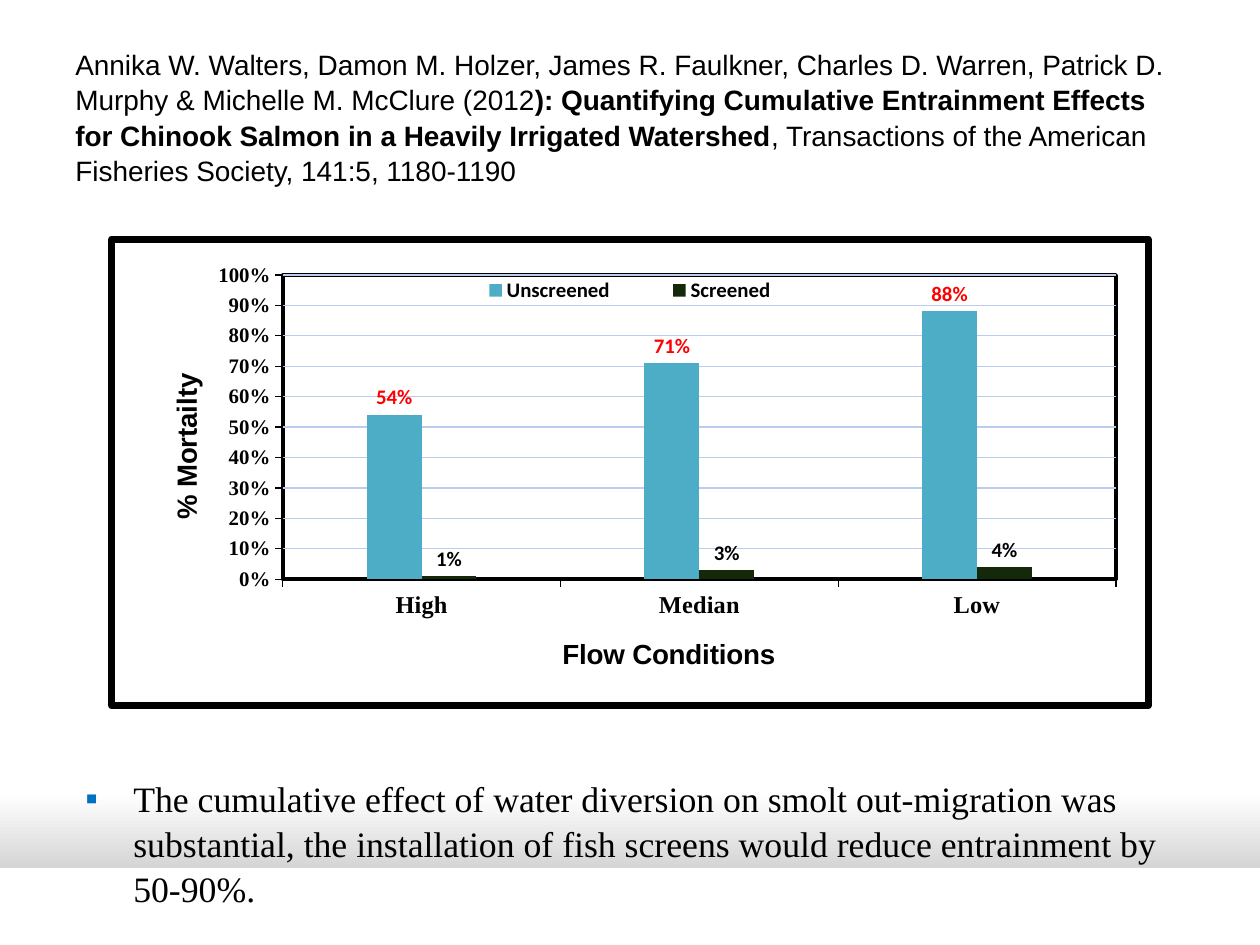
from lxml.etree import SubElement
from pptx import Presentation
from pptx.chart.data import CategoryChartData
from pptx.dml.color import RGBColor
from pptx.enum.chart import XL_CHART_TYPE, XL_LABEL_POSITION, XL_LEGEND_POSITION, XL_TICK_MARK
from pptx.enum.shapes import MSO_SHAPE
from pptx.enum.text import MSO_ANCHOR
from pptx.oxml import parse_xml
from pptx.oxml.ns import nsdecls, qn
from pptx.util import Inches, Pt

CITATION = [
    ("Annika W. Walters, Damon M. Holzer, James R. Faulkner, Charles D. Warren, "
     "Patrick D. Murphy & Michelle M. McClure (2012", False),
    ("): Quantifying Cumulative Entrainment Effects for Chinook Salmon "
     "in a Heavily Irrigated Watershed", True),
    (", Transactions of the American Fisheries Society, 141:5, 1180-1190", False),
]
FINDING = ("The cumulative effect of water diversion on smolt out-migration was substantial, "
           "the installation of fish screens would reduce entrainment by 50-90%.")
FLOWS = ["High", "Median", "Low"]
MORTALITY = [
    ("Unscreened", [0.54, 0.71, 0.88], "unscreened", "highlight"),
    ("Screened", [0.01, 0.03, 0.04], "screened", "ink"),
]
THEME = {
    "ink": "000000", "paper": "FFFFFF", "shade": "A6A6A6", "bullet": "0070C0",
    "unscreened": "4DADC6", "screened": "14280A", "highlight": "FF0000", "grid": "BCCCEF",
    "sans": "Arial", "serif": "Times New Roman", "chart": "Calibri",
    "heading": 16, "finding": 20.4, "category": 14, "label": 12,
}


def color(name):
    return RGBColor.from_string(THEME[name])


def style(font, face, size, bold=False, ink="ink"):
    font.name = THEME[face]
    font.size = Pt(THEME[size])
    font.bold = bold
    font.color.rgb = color(ink)


def add_text(slide, left, top, width, height):
    frame = slide.shapes.add_textbox(*map(Inches, (left, top, width, height))).text_frame
    frame.word_wrap = True
    paragraph = frame.paragraphs[0]
    paragraph.line_spacing = 1.05
    return frame, paragraph


def place(element, index, inner=False, **fractions):
    for old in element.findall(qn("c:layout")):
        element.remove(old)
    layout = parse_xml(f"<c:layout {nsdecls('c')}><c:manualLayout/></c:layout>")
    settings = {"layoutTarget": "inner"} if inner else {}
    settings.update(xMode="edge", yMode="edge", **fractions)
    for tag, value in settings.items():
        SubElement(layout[0], qn(f"c:{tag}"), val=str(value))
    element.insert(index, layout)


def outline(points):
    return parse_xml(
        f'<c:spPr {nsdecls("c", "a")}><a:noFill/><a:ln w="{Pt(points)}"><a:solidFill>'
        f'<a:srgbClr val="{THEME["ink"]}"/></a:solidFill><a:round/></a:ln></c:spPr>')


def style_axis(axis, title, size, x, y):
    axis.axis_title.text_frame.text = title
    style(axis.axis_title.text_frame.paragraphs[0].runs[0].font, "sans", "heading", True)
    place(axis.axis_title._element, 1, x=x, y=y)
    axis.major_tick_mark = XL_TICK_MARK.OUTSIDE
    axis.minor_tick_mark = XL_TICK_MARK.NONE
    style(axis.tick_labels.font, "serif", size, True)
    axis.format.line.color.rgb = color("ink")
    axis.format.line.width = Pt(0.75)


def add_background(slide):
    fill = slide.background.fill
    fill.gradient()
    fill.gradient_angle = 270
    for stop, position, name in zip(fill.gradient_stops, (0.84, 1), ("paper", "shade")):
        stop.position = position
        stop.color.rgb = color(name)
    band = slide.shapes.add_shape(MSO_SHAPE.RECTANGLE, 0, Inches(6.89), Inches(10), Inches(0.61))
    band.shadow.inherit = False
    band.fill.solid()
    band.fill.fore_color.rgb = color("paper")
    band.line.fill.background()


def add_citation(slide):
    frame, paragraph = add_text(slide, 0.5, 0.3, 9, 1.25)
    frame.vertical_anchor = MSO_ANCHOR.MIDDLE
    for text, bold in CITATION:
        run = paragraph.add_run()
        run.text = text
        style(run.font, "sans", "heading", bold)


def add_finding(slide):
    frame, paragraph = add_text(slide, 0.58, 6.1, 9, 1.15)
    paragraph.text = FINDING
    properties = paragraph._p.get_or_add_pPr()
    properties.set("marL", str(Inches(0.38)))
    properties.set("indent", str(-Inches(0.38)))
    bullet_color = SubElement(properties, qn("a:buClr"))
    SubElement(bullet_color, qn("a:srgbClr"), val=THEME["bullet"])
    SubElement(properties, qn("a:buFont"), typeface=THEME["sans"])
    SubElement(properties, qn("a:buChar"), char="▪")
    style(paragraph.runs[0].font, "serif", "finding")


def add_mortality_chart(slide):
    data = CategoryChartData(number_format="0%")
    data.categories = FLOWS
    for name, values, *_ in MORTALITY:
        data.add_series(name, values)
    frame = slide.shapes.add_chart(XL_CHART_TYPE.COLUMN_CLUSTERED,
                                   *map(Inches, (0.86, 1.87, 8.28, 3.76)), data)
    chart = frame.chart
    chart.has_title = False
    style(chart.font, "chart", "label")
    chart_element = chart._chartSpace.find(qn("c:chart"))
    chart_element.addnext(outline(4))
    plot_area = chart_element.find(qn("c:plotArea"))
    place(plot_area, 0, inner=True, x=0.165, y=0.077, w=0.804, h=0.652)
    plot_area.append(outline(2.25))

    style_axis(chart.category_axis, "Flow Conditions", "category", 0.43, 0.84)
    value_axis = chart.value_axis
    style_axis(value_axis, "% Mortailty", "label", 0.05, 0.28)
    value_axis.minimum_scale, value_axis.maximum_scale, value_axis.major_unit = 0, 1, 0.1
    value_axis.tick_labels.number_format = "0%"
    value_axis.tick_labels.number_format_is_linked = False
    value_axis.major_gridlines.format.line.color.rgb = color("grid")
    value_axis.major_gridlines.format.line.width = Pt(0.75)

    chart.has_legend = True
    chart.legend.position = XL_LEGEND_POSITION.TOP
    chart.legend.include_in_layout = False
    style(chart.legend.font, "chart", "label", True)
    place(chart.legend._element, 1, x=0.31, y=0.08, w=0.38, h=0.06)

    plot = chart.plots[0]
    plot.gap_width = 306
    plot.overlap = 0
    plot.vary_by_categories = False
    for series, (_, _, fill, ink) in zip(plot.series, MORTALITY):
        series.format.fill.solid()
        series.format.fill.fore_color.rgb = color(fill)
        labels = series.data_labels
        labels.show_value = True
        labels.number_format = "0%"
        labels.number_format_is_linked = False
        labels.position = XL_LABEL_POSITION.OUTSIDE_END
        style(labels.font, "chart", "label", True, ink)


def main():
    presentation = Presentation()
    presentation.slide_width, presentation.slide_height = Inches(10), Inches(7.5)
    slide = presentation.slides.add_slide(presentation.slide_layouts[6])
    add_background(slide)
    add_citation(slide)
    add_finding(slide)
    add_mortality_chart(slide)
    presentation.save("out.pptx")


if __name__ == "__main__":
    main()
